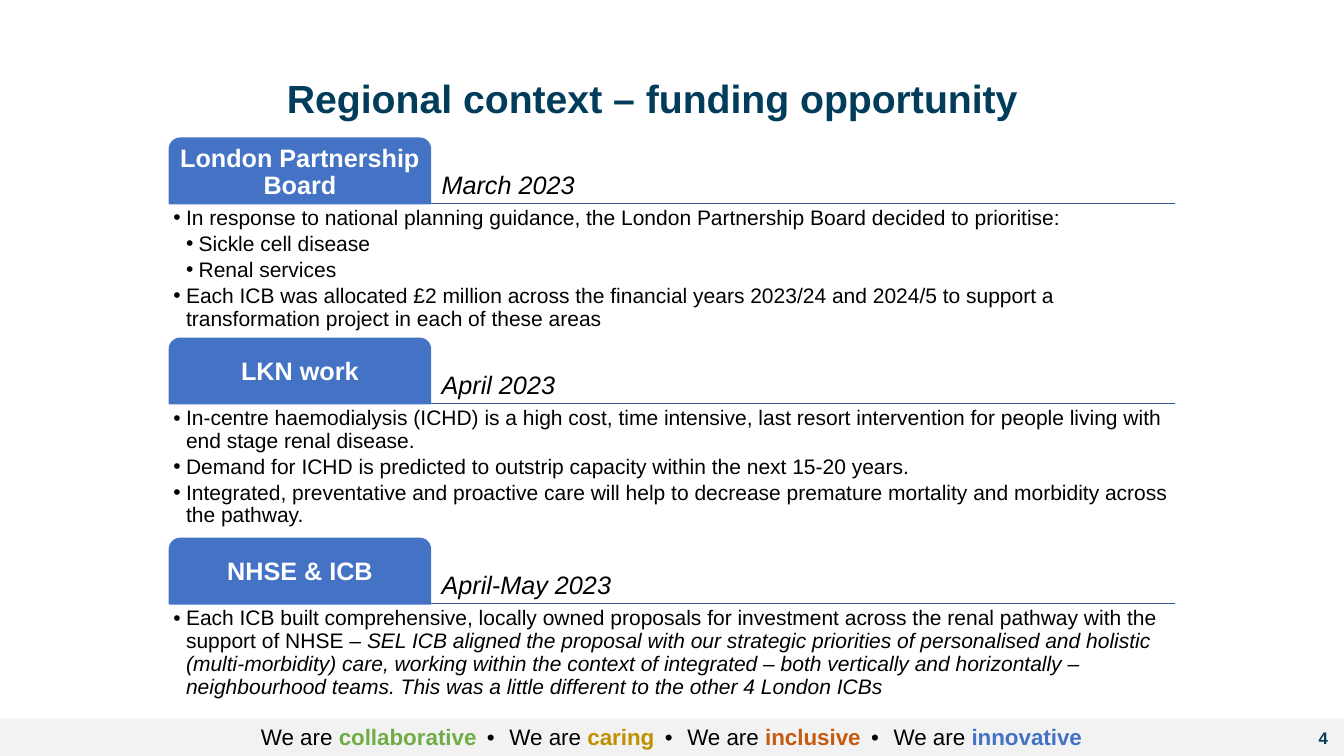
"""Build the regional context slide: three dated milestones with bullet lists."""
from lxml.etree import SubElement
from pptx import Presentation
from pptx.dml.color import RGBColor
from pptx.enum.shapes import MSO_CONNECTOR, MSO_SHAPE
from pptx.enum.text import MSO_ANCHOR, MSO_AUTO_SIZE, PP_ALIGN
from pptx.oxml.ns import qn
from pptx.util import Inches, Pt

COLORS = {
    "navy": "013C5B", "blue": "4472C4", "rule": "365B9D", "band": "F2F2F2",
    "black": "000000", "white": "FFFFFF", "green": "70AD47",
    "gold": "BF9000", "orange": "C55A11",
}
TITLE = "Regional context – funding opportunity"
MILESTONES = [
    ("London Partnership Board", "March 2023", [
        (0, ["In response to national planning guidance, the London Partnership Board decided to prioritise:"]),
        (1, ["Sickle cell disease"]),
        (1, ["Renal services"]),
        (0, ["Each ICB was allocated £2 million across the financial years 2023/24 and 2024/5 "
             "to support a transformation project in each of these areas"]),
    ]),
    ("LKN work", "April 2023", [
        (0, ["In-centre haemodialysis (ICHD) is a high cost, time intensive, last resort "
             "intervention for people living with end stage renal disease."]),
        (0, ["Demand for ICHD is predicted to outstrip capacity within the next 15-20 years."]),
        (0, ["Integrated, preventative and proactive care will help to decrease premature "
             "mortality and morbidity across the pathway."]),
    ]),
    ("NHSE & ICB", "April-May 2023", [
        (0, ["Each ICB built comprehensive, locally owned proposals for investment across the "
             "renal pathway with the support of NHSE – ",
             "SEL ICB aligned the proposal with our strategic priorities of personalised and "
             "holistic (multi-morbidity) care, working within the context of integrated – both "
             "vertically and horizontally – neighbourhood teams. This was a little different to "
             "the other 4 London ICBs"]),
    ]),
]
VALUES = [("collaborative", "green"), ("caring", "gold"),
          ("inclusive", "orange"), ("innovative", "blue")]
SLIDE_NUMBER = "4"

WIDTH, HEIGHT = 13.33, 7.5
LEFT, TOP, ROW_PITCH = 1.68, 1.37, 1.985
CONTENT_WIDTH, TAB_WIDTH, TAB_HEIGHT, LIST_HEIGHT = 9.97, 2.59, 0.65, 1.3
FOOTER_HEIGHT, INSET, INDENT = 0.37, 0.04, 0.125


def color(name):
    return RGBColor.from_string(COLORS[name])


def place(shape, left, top, width, height):
    shape.left, shape.top = Inches(left), Inches(top)
    shape.width, shape.height = Inches(width), Inches(height)


def set_frame(shape, anchor, inset=INSET, left_inset=INSET):
    frame = shape.text_frame
    frame.word_wrap = True
    frame.auto_size = MSO_AUTO_SIZE.NONE
    frame.vertical_anchor = anchor
    frame.margin_left = Inches(left_inset)
    frame.margin_top = frame.margin_right = frame.margin_bottom = Inches(inset)
    return frame


def set_paragraph(paragraph, align=PP_ALIGN.LEFT, spacing=0.9, after=0):
    paragraph.alignment = align
    paragraph.line_spacing = spacing
    paragraph.space_before = Pt(0)
    paragraph.space_after = Pt(after)


def style(run, size, color_name, bold=False, italic=False):
    font = run.font
    font.name, font.size = "Arial", Pt(size)
    font.bold, font.italic = bold, italic
    font.color.rgb = color(color_name)


def write_line(frame, text, size, color_name, align, after=0, bold=False, italic=False):
    frame.text = text
    paragraph = frame.paragraphs[0]
    set_paragraph(paragraph, align, after=after)
    style(paragraph.runs[0], size, color_name, bold, italic)


def add_block(slide, kind, left, top, width, height, fill):
    block = slide.shapes.add_shape(kind, Inches(left), Inches(top), Inches(width), Inches(height))
    block.shadow.inherit = False
    block.fill.solid()
    block.fill.fore_color.rgb = color(fill)
    return block


def add_label(slide, left, top, width, height):
    return slide.shapes.add_textbox(Inches(left), Inches(top), Inches(width), Inches(height))


def add_rule(slide, top):
    rule = slide.shapes.add_connector(
        MSO_CONNECTOR.STRAIGHT, Inches(LEFT), Inches(top),
        Inches(LEFT + CONTENT_WIDTH), Inches(top))
    rule.line.color.rgb = color("rule")
    rule.line.width = Pt(1)
    SubElement(rule._element.spPr, qn("a:effectLst"))


def fill_list(frame, bullets):
    for position, (level, parts) in enumerate(bullets):
        paragraph = frame.paragraphs[0] if position == 0 else frame.add_paragraph()
        paragraph.level = level
        set_paragraph(paragraph, after=2.25)
        properties = paragraph._p.get_or_add_pPr()
        properties.set("marL", str(Inches(INDENT * (level + 1))))
        properties.set("indent", str(-Inches(INDENT)))
        SubElement(properties, qn("a:buChar"), char="•")
        for order, text in enumerate(parts):
            run = paragraph.add_run()
            run.text = text
            style(run, 15, "black", italic=order > 0)


def add_milestone(slide, body, top, name, date, bullets):
    rule_top = top + TAB_HEIGHT
    add_rule(slide, rule_top)
    date_label = add_label(slide, LEFT + TAB_WIDTH, top, CONTENT_WIDTH - TAB_WIDTH, TAB_HEIGHT)
    write_line(set_frame(date_label, MSO_ANCHOR.BOTTOM, left_inset=0.11),
               date, 18, "black", PP_ALIGN.LEFT, after=6.3, italic=True)
    tab = add_block(slide, MSO_SHAPE.ROUND_2_SAME_RECTANGLE, LEFT, top, TAB_WIDTH, TAB_HEIGHT, "blue")
    tab.line.color.rgb = color("blue")
    tab.line.width = Pt(1)
    write_line(set_frame(tab, MSO_ANCHOR.MIDDLE), name, 18, "white",
               PP_ALIGN.CENTER, after=6.3, bold=True)
    place(body, LEFT, rule_top, CONTENT_WIDTH, LIST_HEIGHT)
    fill_list(set_frame(body, MSO_ANCHOR.TOP), bullets)


def add_footer(slide):
    top = HEIGHT - FOOTER_HEIGHT
    band = add_block(slide, MSO_SHAPE.RECTANGLE, 0, top, WIDTH, FOOTER_HEIGHT, "band")
    band.line.fill.background()
    paragraph = set_frame(band, MSO_ANCHOR.TOP, 0.05).paragraphs[0]
    set_paragraph(paragraph, PP_ALIGN.CENTER, spacing=1.0, after=6)
    for position, (value, value_color) in enumerate(VALUES):
        if position:
            separator = paragraph.add_run()
            separator.text = " • "
            style(separator, 16, "black")
            separator._r.get_or_add_rPr().set("spc", "300")
        for text, color_name, bold in (("We are ", "black", False), (value, value_color, True)):
            run = paragraph.add_run()
            run.text = text
            style(run, 16, color_name, bold)
    number = add_label(slide, 11.42, top, 1.85, 0.4)
    write_line(set_frame(number, MSO_ANCHOR.MIDDLE, 0.1), SLIDE_NUMBER, 12, "navy",
               PP_ALIGN.RIGHT, bold=True)


def main():
    presentation = Presentation()
    presentation.slide_width, presentation.slide_height = Inches(WIDTH), Inches(HEIGHT)
    slide = presentation.slides.add_slide(presentation.slide_layouts.get_by_name("Comparison"))
    title, *bodies = slide.placeholders
    place(title, 2.36, 0.64, 8.23, 0.72)
    write_line(set_frame(title, MSO_ANCHOR.MIDDLE, 0.05), TITLE, 28, "navy",
               PP_ALIGN.CENTER, bold=True)
    for row, (body, milestone) in enumerate(zip(bodies, MILESTONES)):
        add_milestone(slide, body, TOP + row * ROW_PITCH, *milestone)
    for spare in bodies[len(MILESTONES):]:
        spare.element.getparent().remove(spare.element)
    add_footer(slide)
    presentation.save("out.pptx")


if __name__ == "__main__":
    main()
